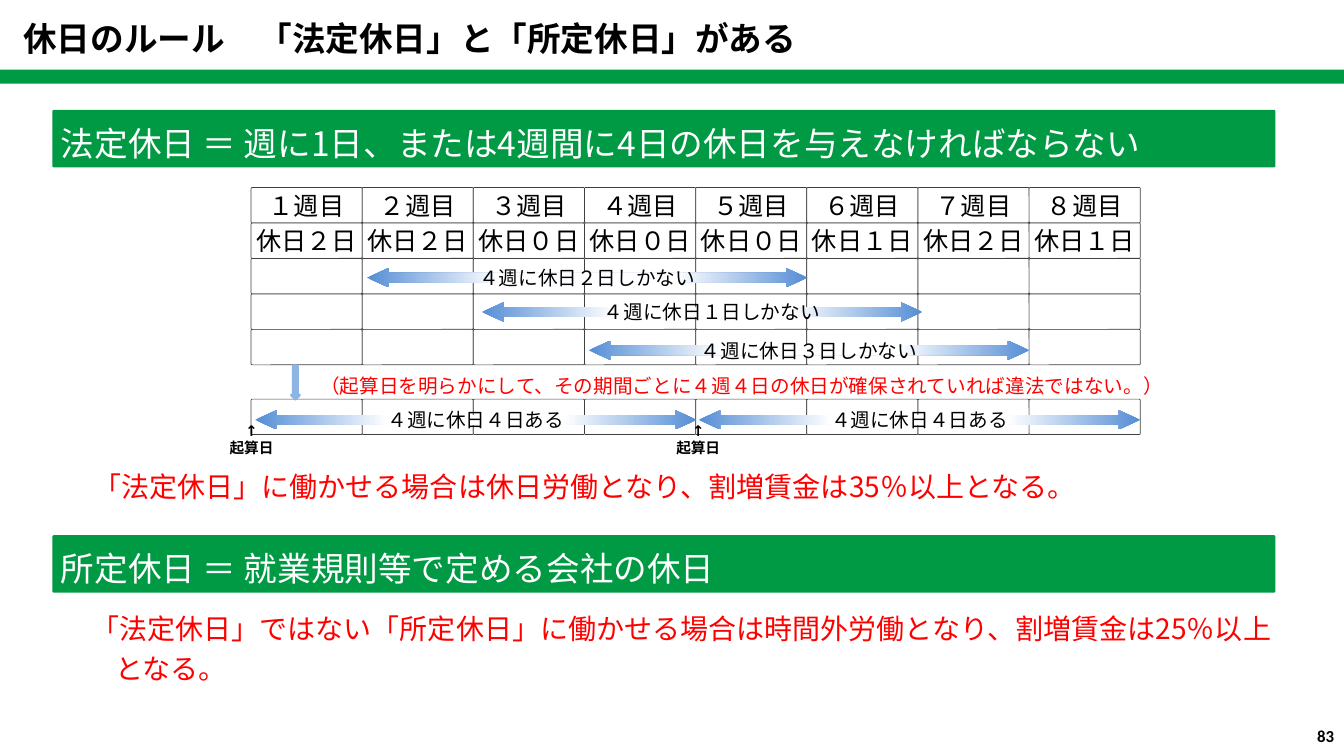
from dataclasses import dataclass

import lxml.etree
import pptx
import pptx.dml.color
import pptx.enum.shapes
import pptx.enum.text
import pptx.oxml.ns
import pptx.util

Inches = pptx.util.Inches
Kind = pptx.enum.shapes.MSO_SHAPE
Align = pptx.enum.text.PP_ALIGN
Anchor = pptx.enum.text.MSO_ANCHOR
qn = pptx.oxml.ns.qn

GOTHIC = "Noto Sans CJK JP"
GREEN, RED, BLACK, WHITE = "009944", "FF0000", "000000", "FFFFFF"
BLUE, PALE, GREY = "558ED5", "8EB4E3", "404040"

# Week grid
LEFT, TOP = 2.49, 1.86
WIDE = (11.31 - LEFT) / 8
TALL = (3.62 - TOP) / 5
WEEKS = "１２３４５６７８"
DAYS = "２２０００１２１"


@dataclass
class Box:
    left: float
    top: float
    width: float
    height: float


@dataclass
class Style:
    size: float
    color: str = BLACK
    font: str = "Karla"
    bold: bool = False
    align: Align = Align.CENTER
    anchor: Anchor = Anchor.MIDDLE
    hang: bool = False


@dataclass
class Note:
    box: Box
    text: str
    size: float
    fill: str = ""


@dataclass
class Span:
    left: float
    top: float
    width: float
    text: str


def rgb(code: str) -> pptx.dml.color.RGBColor:
    return pptx.dml.color.RGBColor.from_string(code)


def place(box: Box) -> tuple:
    return tuple(Inches(n) for n in (box.left, box.top, box.width, box.height))


def write(shape, text: str, style: Style, inset: tuple = (0.1, 0.05, 0.1, 0.05)) -> None:
    frame = shape.text_frame
    frame.word_wrap = True
    frame.vertical_anchor = style.anchor
    frame.margin_left, frame.margin_top, frame.margin_right, frame.margin_bottom = (
        Inches(n) for n in inset)
    frame.text = text
    for para in frame.paragraphs:
        para.alignment = style.align
        font = para.font
        font.size = pptx.util.Pt(style.size)
        font.bold = style.bold
        font.color.rgb = rgb(style.color)
        font.name = style.font
        props = para._p.get_or_add_pPr()
        # East Asian typeface
        lxml.etree.SubElement(props.find(qn("a:defRPr")), qn("a:ea"), typeface=GOTHIC)
        if style.hang:
            para.line_spacing = 1.2
            props.set("marL", str(Inches(0.24)))
            props.set("indent", str(Inches(-0.24)))


def draw(slide, kind: Kind, box: Box, fill: str = "", line: str = "", weight: float = 0.5):
    shape = slide.shapes.add_shape(kind, *place(box))
    shape.shadow.inherit = False
    if fill:
        shape.fill.solid()
        shape.fill.fore_color.rgb = rgb(fill)
    else:
        shape.fill.background()
    if line:
        shape.line.color.rgb = rgb(line)
        shape.line.width = pptx.util.Pt(weight)
    else:
        shape.line.fill.background()
    return shape


def add_cell(slide, col: int, top: float, text: str = "") -> None:
    box = Box(LEFT + col * WIDE, top, WIDE, TALL)
    cell = draw(slide, Kind.ROUNDED_RECTANGLE, box, WHITE, GREY)
    cell.adjustments[0] = 0.036
    if text:
        write(cell, text, Style(18), (0.04,) * 4)


def add_span(slide, span: Span) -> None:
    arrow = draw(slide, Kind.LEFT_RIGHT_ARROW, Box(span.left, span.top, span.width, 0.19))
    arrow.adjustments[0] = 0.5
    arrow.adjustments[1] = 1.12
    arrow.fill.gradient()
    arrow.fill.gradient_angle = 0
    stops = arrow._element.spPr.find(".//" + qn("a:gsLst"))
    stops.clear()
    for pos, code in ((0, BLUE), (30, WHITE), (70, WHITE), (100, BLUE)):
        stop = lxml.etree.SubElement(stops, qn("a:gs"), pos=str(pos * 1000))
        lxml.etree.SubElement(stop, qn("a:srgbClr"), val=code)
    write(arrow, span.text, Style(14))


def add_note(slide, note: Note) -> None:
    shape = draw(slide, Kind.ROUNDED_RECTANGLE, note.box, note.fill)
    shape.adjustments[0] = 0.026
    style = Style(note.size, WHITE if note.fill else RED, GOTHIC, align=Align.LEFT,
                  anchor=Anchor.MIDDLE if note.fill else Anchor.TOP, hang=True)
    write(shape, note.text, style, (0.08, 0.04, 0, 0.04))


def add_label(slide, box: Box, text: str, style: Style) -> None:
    write(slide.shapes.add_textbox(*place(box)), text, style)


SPANS = [
    Span(2.53, 4.07, 4.38, "４週に休日４日ある"),
    Span(6.93, 4.07, 4.38, "４週に休日４日ある"),
    Span(3.64, 2.66, 4.37, "４週に休日２日しかない"),
    Span(4.78, 3, 4.37, "　４週に休日１日しかない"),
    Span(5.84, 3.38, 4.37, "４週に休日３日しかない"),
]

NOTES = [
    Note(Box(0.52, 1.09, 12.13, 0.57),
         "法定休日 ＝ 週に1日、または4週間に4日の休日を与えなければならない", 24, GREEN),
    Note(Box(0.82, 5.95, 11.91, 0.79),
         "「法定休日」ではない「所定休日」に働かせる場合は時間外労働となり、割増賃金は25％以上となる。", 20),
    Note(Box(0.52, 5.31, 12.13, 0.57), "所定休日 ＝ 就業規則等で定める会社の休日", 24, GREEN),
    Note(Box(0.84, 4.54, 12.28, 0.79),
         "「法定休日」に働かせる場合は休日労働となり、割増賃金は35％以上となる。", 20),
    Note(Box(3.09, 3.62, 10.24, 0.79),
         "（起算日を明らかにして、その期間ごとに４週４日の休日が確保されていれば違法ではない。）", 14),
]


def main() -> None:
    deck = pptx.Presentation()
    deck.slide_width, deck.slide_height = Inches(13.33), Inches(7.5)
    slide = deck.slides.add_slide(deck.slide_layouts[5])

    # Title and green bar
    title = slide.shapes.title
    title.left, title.top, title.width, title.height = place(Box(0.13, 0.13, 11.81, 0.5))
    write(title, "休日のルール　「法定休日」と「所定休日」がある",
          Style(24, font=GOTHIC, bold=True, align=Align.LEFT, anchor=Anchor.TOP))
    draw(slide, Kind.RECTANGLE, Box(0, 0.69, 13.33, 0.14), GREEN)

    # Eight weeks: two rows of text, three of spans, one set apart
    for col, (week, days) in enumerate(zip(WEEKS, DAYS)):
        for row, text in enumerate((f"{week}週目", f"休日{days}日", "", "", "")):
            add_cell(slide, col, TOP + row * TALL, text)
        add_cell(slide, col, 3.96)

    # Four-week spans and their start days
    for span in SPANS:
        add_span(slide, span)
    for left in (1.94, 6.37):
        add_label(slide, Box(left, 4.14, 1.11, 0.43), "↑\n起算日", Style(10.5, bold=True))
    draw(slide, Kind.DOWN_ARROW, Box(2.89, 3.63, 0.08, 0.33), PALE, PALE, 2)

    # Headings and remarks
    for note in NOTES:
        add_note(slide, note)

    # Page number
    add_label(slide, Box(10.22, 7.1, 3.11, 0.4), "83",
              Style(12, font="Calibri", bold=True, align=Align.RIGHT))
    deck.save("out.pptx")


if __name__ == "__main__":
    main()
